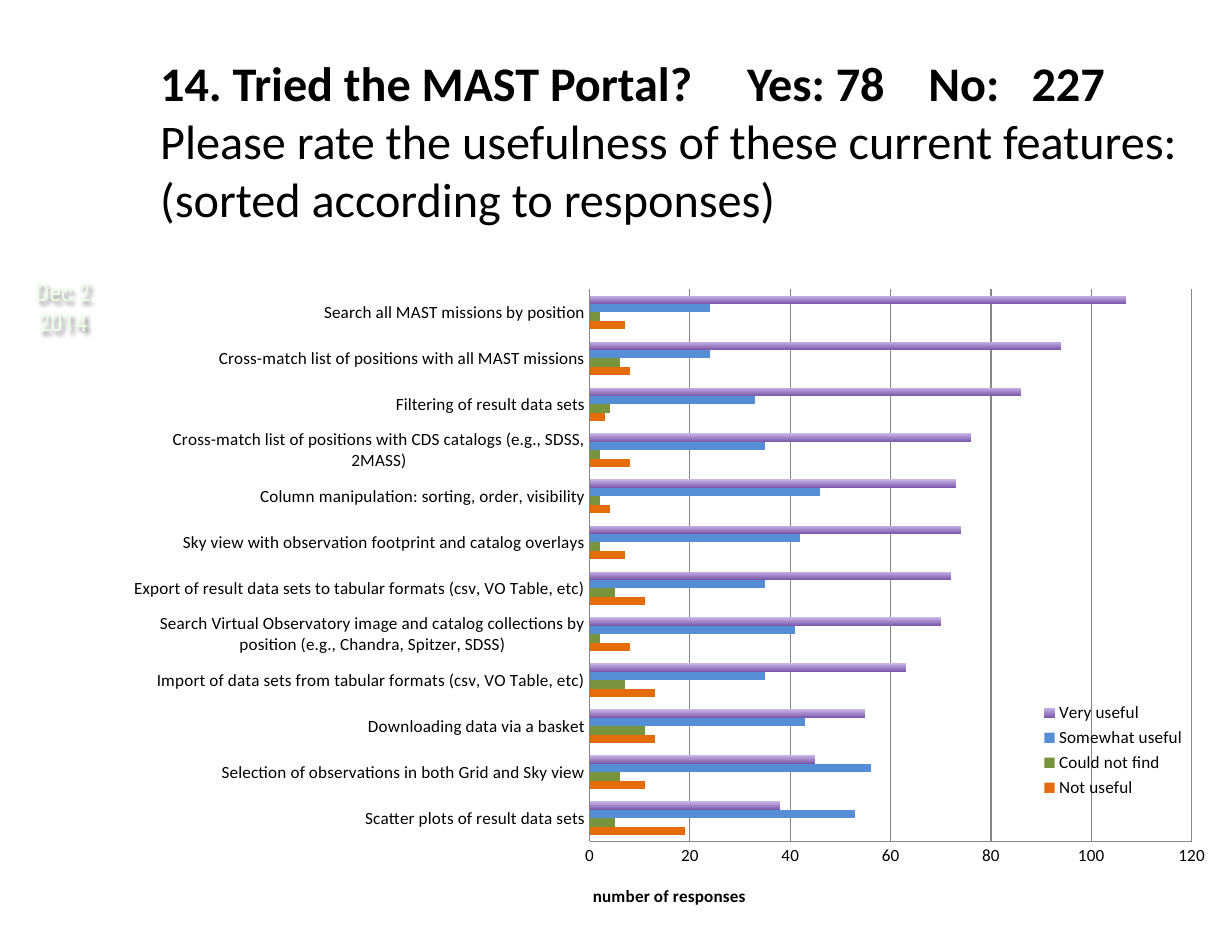
from lxml import etree
from pptx import Presentation
from pptx.chart.data import CategoryChartData
from pptx.dml.color import RGBColor
from pptx.enum.chart import XL_CHART_TYPE as ChartType, XL_LEGEND_POSITION as LegendPos
from pptx.enum.chart import XL_TICK_MARK as TickMark
from pptx.enum.text import MSO_ANCHOR as Anchor, PP_ALIGN as Align
from pptx.oxml import parse_xml
from pptx.oxml.ns import nsdecls, qn
from pptx.util import Inches, Pt

WIDTH, HEIGHT = 11, 8.5
BLACK = RGBColor(0, 0, 0)
PALE_GREEN = RGBColor(0xEE, 0xFF, 0xE8)
GRAY = RGBColor(0x86, 0x86, 0x86)
ORANGE = RGBColor(0xE4, 0x6C, 0x0A)
GREEN = RGBColor(0x77, 0x93, 0x3C)
BLUE = RGBColor(0x55, 0x8E, 0xD5)
LILAC = RGBColor(0xC9, 0xB5, 0xE8)
PURPLE = RGBColor(0x7B, 0x57, 0xA8)

# One row per feature, from the bottom of the chart to the top
RATINGS = ["Not useful", "Could not find", "Somewhat useful", "Very useful"]
FILLS = [(ORANGE,), (GREEN,), (BLUE,), (LILAC, PURPLE)]
FEATURES = [
    ("Scatter plots of result data sets", 19, 5, 53, 38),
    ("Selection of observations in both Grid and Sky view", 11, 6, 56, 45),
    ("Downloading data via a basket", 13, 11, 43, 55),
    ("Import of data sets from tabular formats (csv, VO Table, etc)", 13, 7, 35, 63),
    ("Search Virtual Observatory image and catalog collections by position "
     "(e.g., Chandra, Spitzer, SDSS)", 8, 2, 41, 70),
    ("Export of result data sets to tabular formats (csv, VO Table, etc)", 11, 5, 35, 72),
    ("Sky view with observation footprint and catalog overlays", 7, 2, 42, 74),
    ("Column manipulation: sorting, order, visibility", 4, 2, 46, 73),
    ("Cross-match list of positions with CDS catalogs (e.g., SDSS, 2MASS)", 8, 2, 35, 76),
    ("Filtering of result data sets", 3, 4, 33, 86),
    ("Cross-match list of positions with all MAST missions", 8, 6, 24, 94),
    ("Search all MAST missions by position", 7, 2, 24, 107),
]


def manual_layout(x, y, w=None, h=None, inner=False):
    """Chart layout in shares of the chart's size."""
    values = [("layoutTarget", "inner")] if inner else []
    values += [("xMode", "edge"), ("yMode", "edge"), ("x", x), ("y", y)]
    if w is not None:
        values += [("w", w), ("h", h)]
    parts = "".join(f'<c:{tag} val="{value}"/>' for tag, value in values)
    return parse_xml(f'<c:layout {nsdecls("c")}><c:manualLayout>{parts}'
                     "</c:manualLayout></c:layout>")


def place(element, layout, index):
    for old in element.findall(qn("c:layout")):
        element.remove(old)
    element.insert(index, layout)


class SurveySlide:
    font = "Calibri"

    def __init__(self, deck):
        self.slide = deck.slides.add_slide(deck.slide_layouts[6])

    def box(self, x, y, w, h):
        """Shares of the slide's size to lengths."""
        return (Inches(x * WIDTH), Inches(y * HEIGHT),
                Inches(w * WIDTH), Inches(h * HEIGHT))

    def text(self, area, lines, size, color, font=None, bold_lines=0,
             align=Align.LEFT, anchor=Anchor.TOP, tabs=(), shadow=False):
        holder = self.slide.shapes.add_textbox(*self.box(*area))
        frame = holder.text_frame
        frame.word_wrap = True
        frame.vertical_anchor = anchor
        frame.margin_left = frame.margin_right = Inches(0.11)
        frame.margin_top = frame.margin_bottom = Inches(0.06)
        frame.text = "\n".join(lines)
        for number, paragraph in enumerate(frame.paragraphs):
            paragraph.alignment = align
            if "\t" in lines[number]:
                stops = etree.SubElement(paragraph._p.get_or_add_pPr(), qn("a:tabLst"))
                for stop in tabs:
                    etree.SubElement(stops, qn("a:tab"), pos=str(Inches(stop)), algn="l")
            for run in paragraph.runs:
                run.font.name = font or self.font
                run.font.size = Pt(size)
                run.font.bold = number < bold_lines
                run.font.color.rgb = color
        if shadow:
            # An unfilled box casts the shadow of its letters
            holder._element.spPr.append(parse_xml(
                f'<a:effectLst {nsdecls("a")}><a:outerShdw blurRad="38100" '
                'dist="38100" dir="2700000" algn="tl" rotWithShape="0">'
                '<a:srgbClr val="000000"><a:alpha val="43000"/></a:srgbClr>'
                '</a:outerShdw></a:effectLst>'))

    def bar_chart(self, area, rows, names, fills):
        data = CategoryChartData()
        labels, *columns = zip(*rows)
        data.categories = labels
        for name, values in zip(names, columns):
            data.add_series(name, values)
        chart = self.slide.shapes.add_chart(
            ChartType.BAR_CLUSTERED, *self.box(*area), data).chart
        chart.has_title = False
        chart.font.name, chart.font.size = self.font, Pt(11)
        chart.font.color.rgb = BLACK

        # Bars
        bars = chart.plots[0]
        bars.gap_width, bars.overlap = 150, 0
        bars.vary_by_categories = False
        for series, colors in zip(bars.series, fills):
            fill = series.format.fill
            if len(colors) == 1:
                fill.solid()
                fill.fore_color.rgb = colors[0]
            else:
                fill.gradient()
                fill.gradient_angle = 270
                for stop, color in zip(fill.gradient_stops, colors):
                    stop.color.rgb = color

        # Axes
        counts = chart.value_axis
        for axis in (chart.category_axis, counts):
            axis.major_tick_mark = axis.minor_tick_mark = TickMark.NONE
            axis.tick_labels.font.size = Pt(11)
            axis.format.line.color.rgb = GRAY
        counts.minimum_scale, counts.maximum_scale, counts.major_unit = 0, 120, 20
        counts.has_major_gridlines = True
        counts.major_gridlines.format.line.color.rgb = GRAY
        caption = counts.axis_title.text_frame
        caption.text = "number of responses"
        letters = caption.paragraphs[0].runs[0].font
        letters.name, letters.size, letters.bold = self.font, Pt(11), True
        letters.color.rgb = BLACK

        # Legend over the plot, and places of the parts
        chart.has_legend = True
        legend = chart.legend
        legend.position = LegendPos.RIGHT
        legend.include_in_layout = False
        legend.font.size = Pt(11)
        place(legend._element, manual_layout(0.813, 0.645, 0.16, 0.154), 1)
        place(counts.axis_title._element, manual_layout(0.418, 0.916), 1)
        place(chart._chartSpace.chart.plotArea,
              manual_layout(0.418, 0.038, 0.546, 0.819, inner=True), 0)


def main():
    deck = Presentation()
    deck.slide_width, deck.slide_height = Inches(WIDTH), Inches(HEIGHT)
    survey = SurveySlide(deck)

    # Date at the left edge
    survey.text((0.004, 0.284, 0.094, 0.076), ["Dec 2 2014"], 16, PALE_GREEN,
                font="Roboto Condensed", align=Align.CENTER, shadow=True)

    # Question
    survey.text((0.12, 0, 0.88, 0.295),
                ["14. Tried the MAST Portal?\tYes: 78\tNo:\t227",
                 "Please rate the usefulness of these current features:",
                 "(sorted according to responses)"],
                31, BLACK, bold_lines=1, anchor=Anchor.MIDDLE, tabs=(5.24, 6.86, 7.78))

    # Ratings
    survey.bar_chart((0.1045, 0.277, 0.895, 0.708), FEATURES, RATINGS, FILLS)
    deck.save("out.pptx")


if __name__ == "__main__":
    main()
